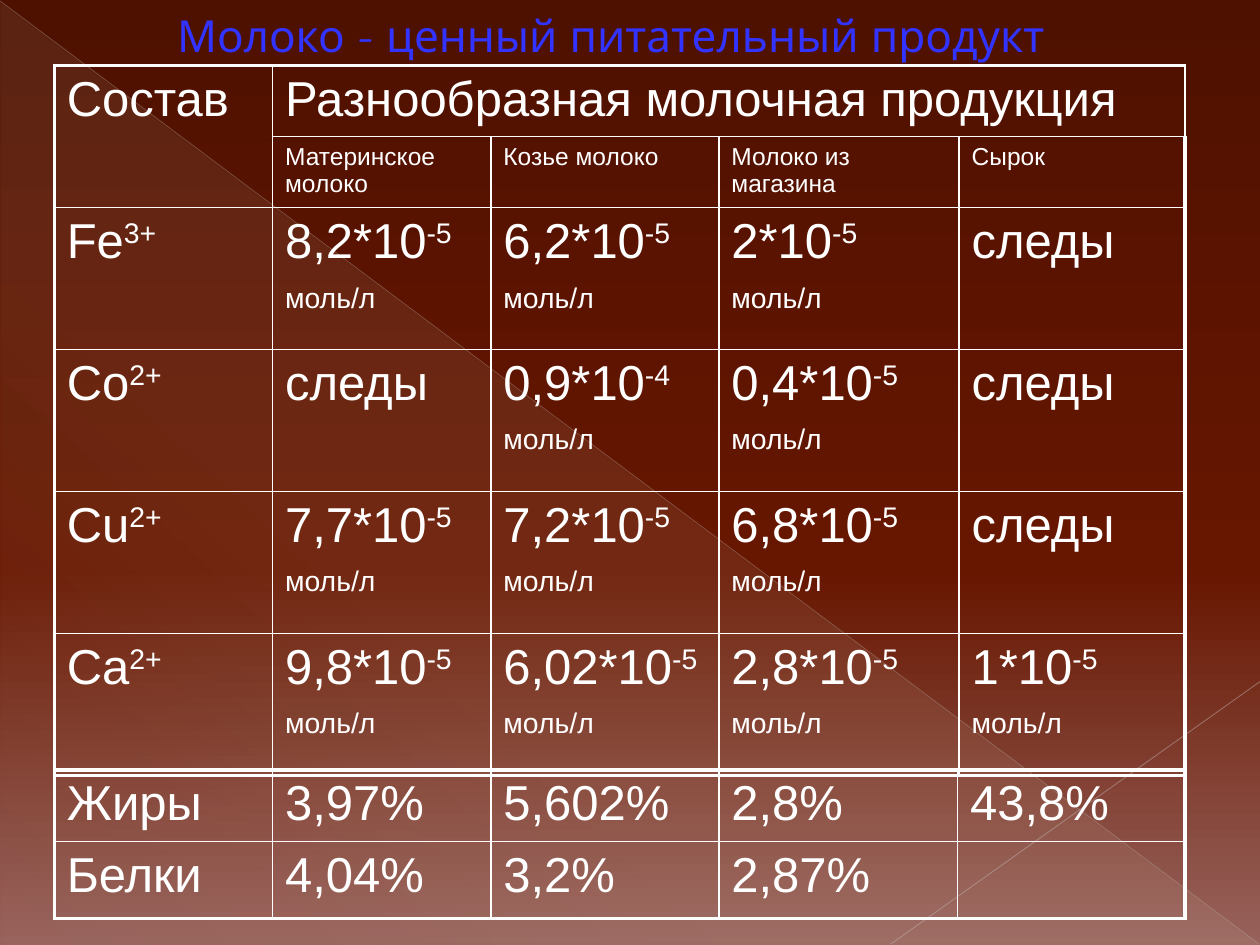
from pptx import Presentation
from pptx.dml.color import RGBColor
from pptx.enum import shapes as sh, text as tx
from pptx.oxml import parse_xml
from pptx.oxml.ns import nsdecls, qn
from pptx.util import Pt

WHITE = RGBColor(0xFF, 0xFF, 0xFF)
BLUE = RGBColor(0x33, 0x33, 0xFF)
TEAL = RGBColor(0x27, 0x64, 0x74)
DARK = RGBColor(0x4E, 0x11, 0x00)
RUST = RGBColor(0x67, 0x16, 0x00)
ROSE = RGBColor(0x97, 0x62, 0x5B)
CREAM = RGBColor(0xE7, 0xDE, 0xC9)
GREY = RGBColor(0xBD, 0xB3, 0xB2)
PALE = RGBColor(0xC5, 0xBC, 0xBB)
NS = nsdecls("a")


def shade(root, stops, angle):
    old = root.find(".//" + qn("a:gradFill"))
    marks = "".join(
        f'<a:gs pos="{pos * 1000}"><a:srgbClr val="{color}">'
        f'<a:alpha val="{alpha * 1000}"/></a:srgbClr></a:gs>'
        for pos, color, alpha in stops)
    old.getparent().replace(old, parse_xml(
        f'<a:gradFill {NS} rotWithShape="1"><a:gsLst>{marks}</a:gsLst>'
        f'<a:lin ang="{angle * 60000}" scaled="0"/></a:gradFill>'))


def edge(tag, width, color):
    return parse_xml(
        f'<a:{tag} {NS} w="{Pt(width)}"><a:solidFill><a:srgbClr val="{color}"/>'
        f'</a:solidFill><a:prstDash val="solid"/></a:{tag}>')


deck = Presentation()
deck.slide_width, deck.slide_height = Pt(720), Pt(540)
slide = deck.slides.add_slide(deck.slide_layouts[5])
slide.background.fill.gradient()
shade(slide.element, [(0, DARK, 100), (60, RUST, 100), (100, ROSE, 100)], 90)

wedge = slide.shapes.add_shape(
    sh.MSO_SHAPE.RIGHT_TRIANGLE, Pt(0.5), Pt(1), Pt(719.5), Pt(539))
wedge.shadow.inherit = False
wedge.line.fill.background()
wedge.fill.gradient()
shade(wedge.element, [(0, CREAM, 10), (70, CREAM, 8), (100, CREAM, 1)], 133)

rays = [
    ((0, 0.5, 719.5, 539.5), GREY, 0.39, 35),
    ((720, 389.5, 509, 539.5), PALE, 0.47, 45),
]
for ends, color, width, alpha in rays:
    ray = slide.shapes.add_connector(
        sh.MSO_CONNECTOR.STRAIGHT, *[Pt(v) for v in ends])
    ray.line.color.rgb = color
    ray.line.width = Pt(width)
    ray.element.find(".//" + qn("a:srgbClr")).append(
        parse_xml(f'<a:alpha {NS} val="{alpha * 1000}"/>'))
    ray.element.spPr.append(parse_xml(f"<a:effectLst {NS}/>"))

upper = [
    ["Состав", "Разнообразная молочная продукция", "", "", ""],
    ["", "Материнское молоко", "Козье молоко", "Молоко из магазина", "Сырок"],
    ["Fе^3+", "8,2*10^-5|^моль/л", "6,2*10^-5|^моль/л", "2*10^-5|^моль/л", "следы"],
    ["Co^2+", "следы", "0,9*10^-4|^моль/л", "0,4*10^-5|^моль/л", "следы"],
    ["Cu^2+", "7,7*10^-5|^моль/л", "7,2*10^-5|^моль/л", "6,8*10^-5|^моль/л", "следы"],
    ["Ca^2+", "9,8*10^-5|^моль/л", "6,02*10^-5|^моль/л", "2,8*10^-5|^моль/л",
     "1*10^-5|^моль/л"],
]
lower = [
    ["Жиры", "3,97%", "5,602%", "2,8%", "43,8%"],
    ["Белки", "4,04%", "3,2%", "2,87%", ""],
]
grids = [
    (upper, 37.5, [124.7, 124.8, 130.3, 137.3, 129.2], [40.6] * 2 + [81.1] * 4,
     [(0, 0, 1, 0), (0, 1, 0, 4)]),
    (lower, 440, [124.7, 124.8, 130.3, 136.4, 130.1], [41, 44], []),
]
for data, top, cols, rows, spans in grids:
    grid = slide.shapes.add_table(
        len(rows), len(cols), Pt(31), Pt(top), Pt(sum(cols)), Pt(sum(rows))).table
    grid.first_row = grid.horz_banding = False
    for col, width in zip(grid.columns, cols):
        col.width = Pt(width)
    for row, height in zip(grid.rows, rows):
        row.height = Pt(height)
    for r1, c1, r2, c2 in spans:
        grid.cell(r1, c1).merge(grid.cell(r2, c2))
    for r, words in enumerate(data):
        for c, word in enumerate(words):
            cell = grid.cell(r, c)
            cell.fill.background()
            outer = {"lnL": c == 0, "lnR": c == len(cols) - 1,
                     "lnT": r == 0, "lnB": r == len(rows) - 1}
            for i, (tag, thick) in enumerate(outer.items()):
                cell._tc.tcPr.insert(i, edge(tag, 2.25 if thick else 1, WHITE))
            size = 14 if data is upper and r == 1 else 28
            frame = cell.text_frame
            for i, part in enumerate(word.split("|")):
                para = frame.add_paragraph() if i else frame.paragraphs[0]
                para.space_before = Pt(size * 0.2)
                for j, bit in enumerate(part.split("^")):
                    if not bit:
                        continue
                    run = para.add_run()
                    run.text = bit
                    for key, val in {"name": "Arial", "size": Pt(size)}.items():
                        setattr(run.font, key, val)
                    run.font.color.rgb = WHITE
                    if j:
                        run._r.get_or_add_rPr().set("baseline", "30000")

title = slide.shapes.title
place = {"left": 56, "top": 0, "width": 628.5, "height": 39.6}
for key, val in place.items():
    setattr(title, key, Pt(val))
form = {"vertical_anchor": tx.MSO_ANCHOR.MIDDLE, "word_wrap": True,
        "auto_size": tx.MSO_AUTO_SIZE.NONE}
for key, val in form.items():
    setattr(title.text_frame, key, val)
para = title.text_frame.paragraphs[0]
para.alignment = tx.PP_ALIGN.LEFT
para._p.get_or_add_pPr().set("marL", str(Pt(38)))
run = para.add_run()
run.text = "Молоко - ценный питательный продукт"
for key, val in {"name": "Quicksand", "size": Pt(25.2)}.items():
    setattr(run.font, key, val)
run.font.color.rgb = BLUE
run._r.get_or_add_rPr().insert(0, edge("ln", 0.5, TEAL))

deck.save("out.pptx")
